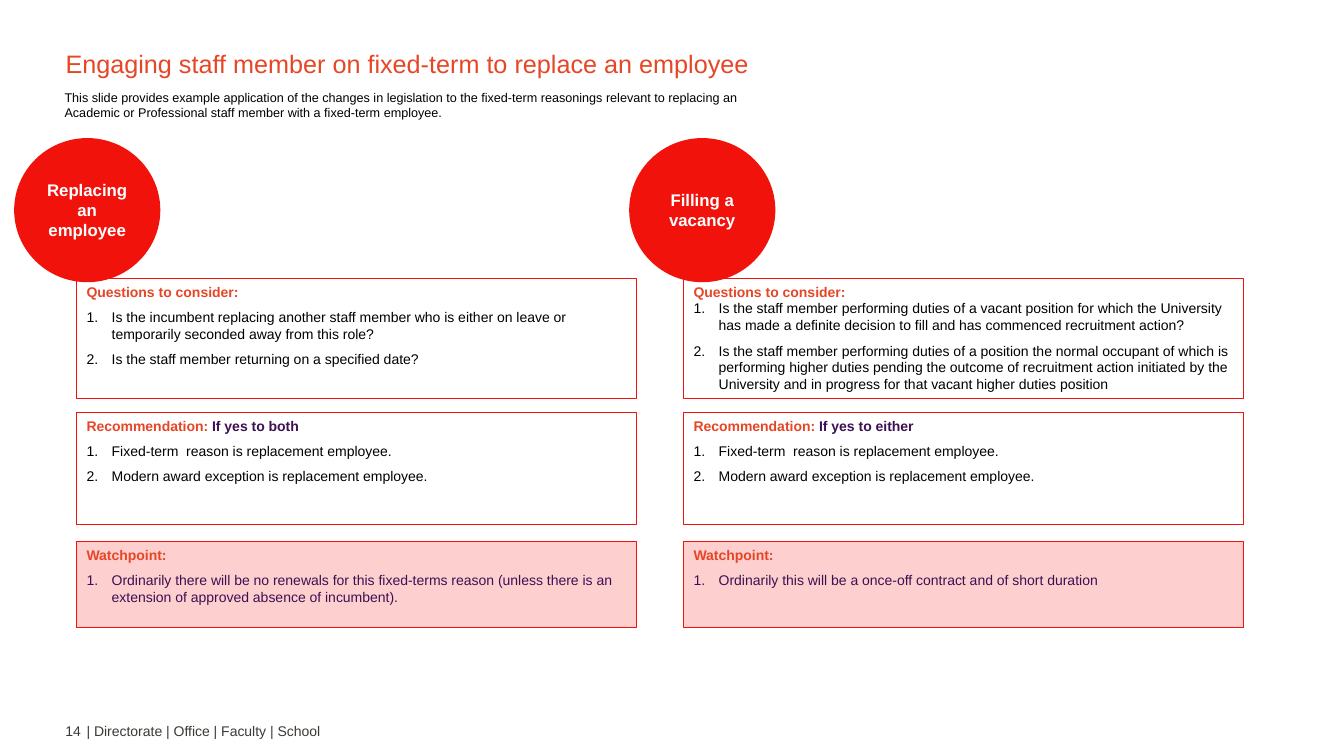
"""Build the slide on engaging fixed-term staff to replace an employee."""
from lxml.etree import SubElement
from pptx import Presentation
from pptx.dml.color import RGBColor
from pptx.enum.shapes import MSO_SHAPE
from pptx.enum.text import MSO_ANCHOR, MSO_AUTO_SIZE, PP_ALIGN
from pptx.oxml.ns import qn
from pptx.util import Inches, Pt

RED, ORANGE, PINK = "F2120C", "E64626", "FDCFCE"
PURPLE, BLACK, GREY, WHITE = "3C1053", "000000", "3D3935", "FFFFFF"


def rgb(hex_color):
    return RGBColor.from_string(hex_color)


def style(paragraph, size, color, bold=False, align=PP_ALIGN.LEFT, before=0):
    paragraph.alignment = align
    paragraph.space_before = Pt(before)
    paragraph.font.name = "Arial"
    paragraph.font.size = Pt(size)
    paragraph.font.bold = bold
    paragraph.font.color.rgb = rgb(color)


presentation = Presentation()
presentation.slide_width, presentation.slide_height = Inches(13.33), Inches(7.5)
slide = presentation.slides.add_slide(presentation.slide_layouts[1])
title, intro = slide.placeholders

headers = [
    (title, 0.55, 0.43, 9.43, 18, ORANGE,
     "Engaging staff member on fixed-term to replace an employee"),
    (intro, 0.54, 0.84, 6.89, 9, BLACK,
     "This slide provides example application of the changes in legislation to the "
     "fixed-term reasonings relevant to replacing an Academic or Professional staff "
     "member with a fixed-term employee."),
]
for header, left, top, width, size, color, words in headers:
    header.left, header.top = Inches(left), Inches(top)
    header.width, header.height = Inches(width), Inches(0.4)
    header.text_frame.text = words
    header.text_frame.auto_size = MSO_AUTO_SIZE.NONE
    header.text_frame.vertical_anchor = MSO_ANCHOR.TOP
    paragraph = header.text_frame.paragraphs[0]
    properties = paragraph._p.get_or_add_pPr()
    properties.set("marL", "0")
    properties.set("indent", "0")
    SubElement(properties, qn("a:buNone"))
    style(paragraph, size, color)

footers = [(0.55, 0.49, "14"), (0.76, 3.38, "| Directorate | Office | Faculty | School")]
for left, width, words in footers:
    footer = slide.shapes.add_textbox(Inches(left), Inches(7.12), Inches(width), Inches(0.27))
    footer.text_frame.word_wrap = True
    footer.text_frame.text = words
    style(footer.text_frame.paragraphs[0], 10, GREY)

panel_rows = [(2.76, 1.19, None, BLACK), (4.09, 1.11, None, BLACK), (5.37, 0.86, PINK, PURPLE)]
outcomes = ["Fixed-term  reason is replacement employee.",
            "Modern award exception is replacement employee."]
scenarios = [
    (0.76, 0.14, "Replacing an employee", [
        ("Questions to consider:", "", 6, [
            "Is the incumbent replacing another staff member who is either on leave or "
            "temporarily seconded away from this role?",
            "Is the staff member returning on a specified date?"]),
        ("Recommendation: ", "If yes to both", 6, outcomes),
        ("Watchpoint:", "", 6, [
            "Ordinarily there will be no renewals for this fixed-terms reason (unless "
            "there is an extension of approved absence of incumbent)."]),
    ]),
    (6.78, 6.24, "Filling a vacancy", [
        ("Questions to consider:", "", 0, [
            "Is the staff member performing duties of a vacant position for which the "
            "University has made a definite decision to fill and has commenced "
            "recruitment action?",
            "Is the staff member performing duties of a position the normal occupant of "
            "which is performing higher duties pending the outcome of recruitment action "
            "initiated by the University and in progress for that vacant higher duties "
            "position"]),
        ("Recommendation: ", "If yes to either", 6, outcomes),
        ("Watchpoint:", "", 6, [
            "Ordinarily this will be a once-off contract and of short duration"]),
    ]),
]

for panel_left, badge_left, scenario, panels in scenarios:
    for (top, height, fill, item_color), (heading, condition, gap, items) in zip(panel_rows, panels):
        panel = slide.shapes.add_shape(MSO_SHAPE.RECTANGLE, Inches(panel_left), Inches(top),
                                       Inches(5.55), Inches(height))
        panel.shadow.inherit = False
        panel.line.color.rgb = rgb(RED)
        panel.line.width = Pt(0.75)
        if fill:
            panel.fill.solid()
            panel.fill.fore_color.rgb = rgb(fill)
        else:
            panel.fill.background()
        panel.text_frame.word_wrap = True
        panel.text_frame.vertical_anchor = MSO_ANCHOR.TOP
        lead = panel.text_frame.paragraphs[0]
        style(lead, 10, ORANGE, bold=True)
        lead.add_run().text = heading
        if condition:
            answer = lead.add_run()
            answer.text = condition
            answer.font.color.rgb = rgb(PURPLE)
        for position, words in enumerate(items):
            item = panel.text_frame.add_paragraph()
            item.text = words
            properties = item._p.get_or_add_pPr()
            properties.set("marL", str(Inches(0.25)))
            properties.set("indent", str(-Inches(0.25)))
            SubElement(properties, qn("a:buFont"), typeface="Arial")
            SubElement(properties, qn("a:buAutoNum"), type="arabicPeriod")
            style(item, 10, item_color, before=6 if position else gap)

    badge = slide.shapes.add_shape(MSO_SHAPE.FLOWCHART_CONNECTOR, Inches(badge_left),
                                   Inches(1.37), Inches(1.45), Inches(1.43))
    badge.shadow.inherit = False
    badge.fill.solid()
    badge.fill.fore_color.rgb = rgb(RED)
    badge.line.fill.background()
    badge.text_frame.word_wrap = True
    badge.text_frame.vertical_anchor = MSO_ANCHOR.MIDDLE
    badge.text_frame.text = scenario
    style(badge.text_frame.paragraphs[0], 12, WHITE, bold=True, align=PP_ALIGN.CENTER)

presentation.save("out.pptx")
